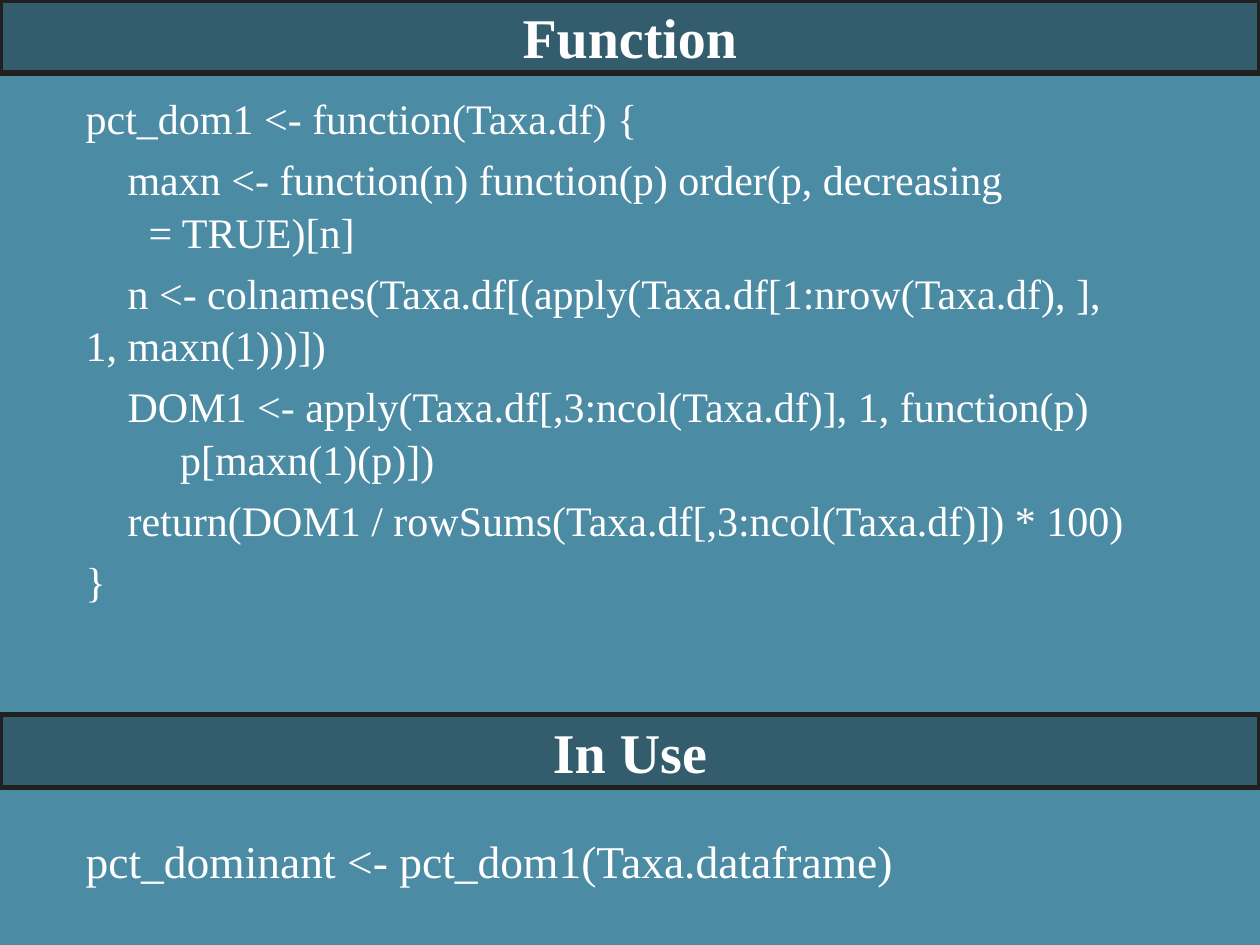
from lxml import etree
from pptx import Presentation
from pptx.dml.color import RGBColor
from pptx.enum.shapes import MSO_SHAPE
from pptx.enum.text import MSO_ANCHOR, MSO_AUTO_SIZE, PP_ALIGN
from pptx.oxml.ns import qn
from pptx.util import Inches, Pt

RECT = MSO_SHAPE.RECTANGLE
MIDDLE, TOP = MSO_ANCHOR.MIDDLE, MSO_ANCHOR.TOP
CENTER, LEFT = PP_ALIGN.CENTER, PP_ALIGN.LEFT
FIXED = MSO_AUTO_SIZE.NONE

BLUE = RGBColor(0x4C, 0x8B, 0xA4)
DARK = RGBColor(0x33, 0x5D, 0x6D)
EDGE = RGBColor(0x20, 0x20, 0x20)
WHITE = RGBColor(0xFF, 0xFF, 0xFF)
FONT = "Times New Roman"

# A \v is a line break within one statement
CODE = [
    "pct_dom1 <- function(Taxa.df) {",
    "    maxn <- function(n) function(p) order(p, decreasing\v      = TRUE)[n]",
    "    n <- colnames(Taxa.df[(apply(Taxa.df[1:nrow(Taxa.df), ],\v1, maxn(1)))])",
    "    DOM1 <- apply(Taxa.df[,3:ncol(Taxa.df)], 1, function(p)\v"
    "         p[maxn(1)(p)])",
    "    return(DOM1 / rowSums(Taxa.df[,3:ncol(Taxa.df)]) * 100)",
    "}",
]
USAGE = ["pct_dominant <- pct_dom1(Taxa.dataframe)"]


def place(shape, box):
    shape.left, shape.top, shape.width, shape.height = map(Inches, box)


def style(para, size, bold=False):
    for run in para.runs:
        font = run.font
        font.name, font.size, font.bold = FONT, Pt(size), bold
        font.color.rgb = WHITE


def banner(shape, box, text):
    """Full-width heading bar."""
    place(shape, box)
    shape.fill.solid()
    shape.fill.fore_color.rgb = DARK
    shape.line.color.rgb = EDGE
    shape.line.width = Pt(3)
    frame = shape.text_frame
    frame.text = text
    frame.auto_size = FIXED
    frame.vertical_anchor = MIDDLE
    frame.margin_top = frame.margin_bottom = 0
    para = frame.paragraphs[0]
    para.alignment = CENTER
    style(para, 32, True)


def listing(shape, box, lines, size):
    """Code statements, one paragraph each, without bullets."""
    place(shape, box)
    frame = shape.text_frame
    frame.text = "\n".join(lines)
    frame.word_wrap = True
    frame.auto_size = FIXED
    frame.vertical_anchor = TOP
    for i, para in enumerate(frame.paragraphs):
        props = para._p.get_or_add_pPr()
        props.set("marL", "0")
        props.set("indent", "0")
        etree.SubElement(props, qn("a:buNone"))
        para.alignment = LEFT
        para.line_spacing = 1.04
        para.space_before = Pt(5 if i else 0)
        style(para, size)


def main():
    prs = Presentation()
    prs.slide_width, prs.slide_height = Inches(10), Inches(7.5)
    slide = prs.slides.add_slide(prs.slide_layouts[3])
    slide.background.fill.solid()
    slide.background.fill.fore_color.rgb = BLUE
    title, code, usage = slide.placeholders

    # Function definition
    banner(title, (0, 0, 10, 0.58), "Function")
    listing(code, (0.58, 0.67, 8.75, 5), CODE, 24)

    # Example call
    bar = slide.shapes.add_shape(RECT, 0, 0, 0, 0)
    bar.shadow.inherit = False
    banner(bar, (0, 5.67, 10, 0.58), "In Use")
    listing(usage, (0.58, 6.54, 9.42, 0.96), USAGE, 26)

    prs.save("out.pptx")


if __name__ == "__main__":
    main()
